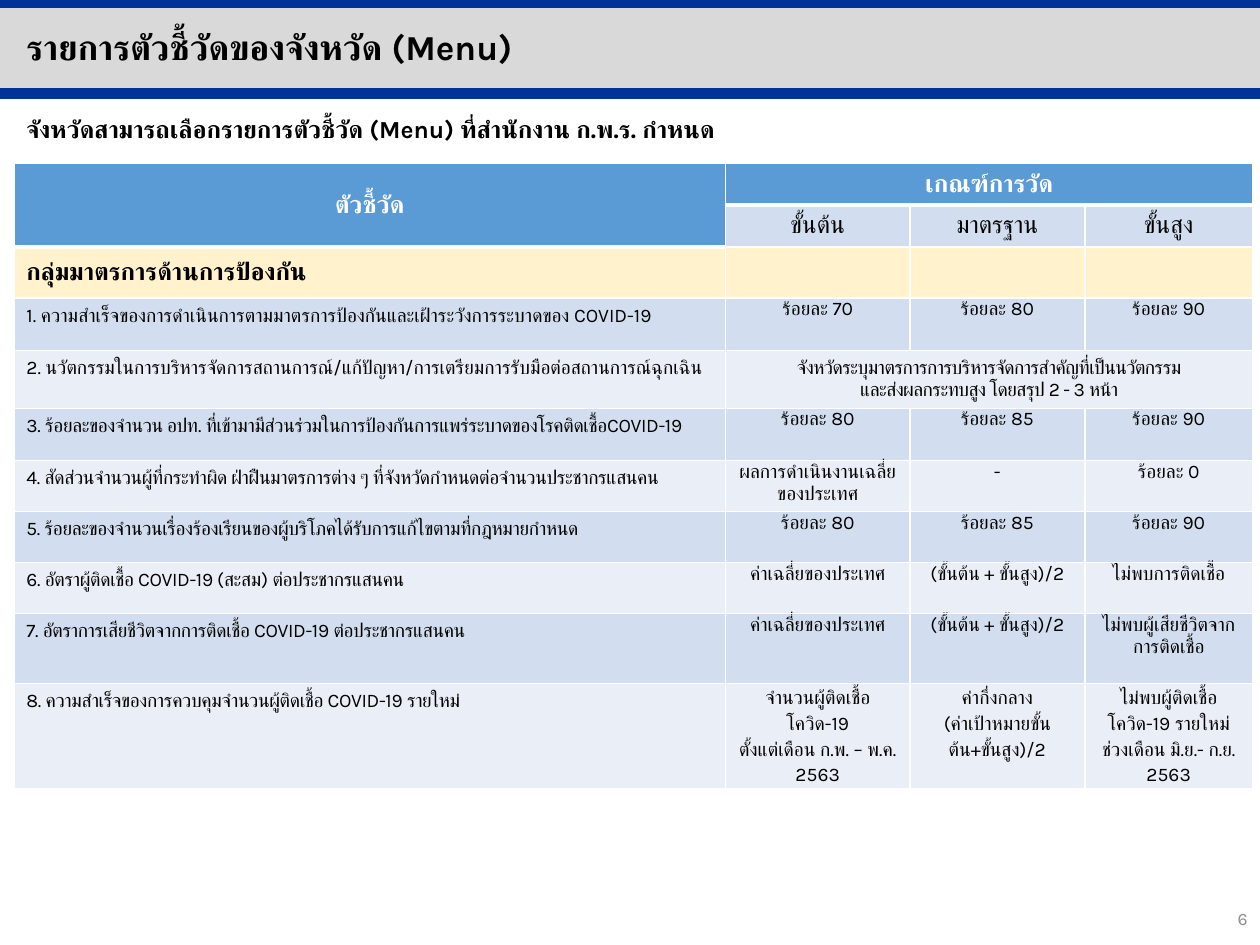
import dataclasses

import pptx
import pptx.dml.color
import pptx.enum.lang
import pptx.enum.shapes
import pptx.enum.text
import pptx.oxml.ns
import pptx.util
from lxml import etree

Cm = pptx.util.Cm
Pt = pptx.util.Pt
ALIGN = pptx.enum.text.PP_ALIGN
ANCHOR = pptx.enum.text.MSO_ANCHOR
qn = pptx.oxml.ns.qn


@dataclasses.dataclass(frozen=True)
class Theme:
    """Colours, font and type sizes of the deck."""
    font: str = "Karla"
    text: str = "000000"
    white: str = "FFFFFF"
    muted: str = "8C8C8C"
    bar: str = "D9D9D9"
    rule: str = "003399"
    header: str = "5B9BD5"
    group: str = "FFF2CC"
    bands: tuple = ("D2DEEF", "EAEFF7")
    title: int = 20
    heading: int = 14
    body: int = 11
    number: int = 10


T = Theme()

COLUMNS = [14.35, 3.71, 3.53, 3.38]
ROW_HEIGHTS = [0.83, 0.85, 1.03, 1.05, 1.17, 1.05, 1.03, 1.03, 1.03, 1.41, 2.12]
LEVELS = ["ขั้นต้น", "มาตรฐาน", "ขั้นสูง"]
INDICATORS = [
    ("1. ความสำเร็จของการดำเนินการตามมาตรการป้องกันและเฝ้าระวังการระบาดของ COVID-19", 0,
     ["ร้อยละ 70", "ร้อยละ 80", "ร้อยละ 90"]),
    ("2. นวัตกรรมในการบริหารจัดการสถานการณ์/แก้ปัญหา/การเตรียมการรับมือต่อสถานการณ์ฉุกเฉิน", 0,
     [["จังหวัดระบุมาตรการการบริหารจัดการสำคัญที่เป็นนวัตกรรม",
       "และส่งผลกระทบสูง โดยสรุป 2 - 3 หน้า"]]),
    ("3. ร้อยละของจำนวน อปท. ที่เข้ามามีส่วนร่วมในการป้องกันการแพร่ระบาดของโรคติดเชื้อCOVID-19", -0.2,
     ["ร้อยละ 80", "ร้อยละ 85", "ร้อยละ 90"]),
    ("4. สัดส่วนจำนวนผู้ที่กระทำผิด ฝ่าฝืนมาตรการต่าง ๆ ที่จังหวัดกำหนดต่อจำนวนประชากรแสนคน", -0.2,
     ["ผลการดำเนินงานเฉลี่ยของประเทศ", "-", "ร้อยละ 0"]),
    ("5. ร้อยละของจำนวนเรื่องร้องเรียนของผู้บริโภคได้รับการแก้ไขตามที่กฎหมายกำหนด", -0.2,
     ["ร้อยละ 80", "ร้อยละ 85", "ร้อยละ 90"]),
    ("6. อัตราผู้ติดเชื้อ COVID-19 (สะสม) ต่อประชากรแสนคน", -0.2,
     ["ค่าเฉลี่ยของประเทศ", "(ขั้นต้น + ขั้นสูง)/2", "ไม่พบการติดเชื้อ"]),
    ("7. อัตราการเสียชีวิตจากการติดเชื้อ COVID-19 ต่อประชากรแสนคน", -0.2,
     ["ค่าเฉลี่ยของประเทศ", "(ขั้นต้น + ขั้นสูง)/2", "ไม่พบผู้เสียชีวิตจากการติดเชื้อ"]),
    ("8. ความสำเร็จของการควบคุมจำนวนผู้ติดเชื้อ COVID-19 รายใหม่", -0.2,
     ["จำนวนผู้ติดเชื้อ\nโควิด-19\nตั้งแต่เดือน ก.พ. – พ.ค. 2563",
      ["ค่ากึ่งกลาง", "(ค่าเป้าหมายขั้นต้น+ขั้นสูง)/2"],
      "ไม่พบผู้ติดเชื้อ\nโควิด-19 รายใหม่\nช่วงเดือน มิ.ย.- ก.ย. 2563"]),
]


def rgb(value):
    """Return a colour from its hex value."""
    return pptx.dml.color.RGBColor.from_string(value)


def place(sp, box):
    """Move a shape to a box given in centimetres."""
    sp.left, sp.top, sp.width, sp.height = (Cm(v) for v in box)


def write(tf, text, size, color=T.text, bold=False, align=ALIGN.LEFT,
          spacing=0, leading=None, hanging=0):
    """Write a string, or a list of paragraphs, into a text frame."""
    for i, line in enumerate([text] if isinstance(text, str) else text):
        p = tf.add_paragraph() if i else tf.paragraphs[0]
        pPr = p._p.get_or_add_pPr()
        pPr.set("marL", str(Cm(hanging)))
        pPr.set("indent", str(-Cm(hanging)))
        etree.SubElement(pPr, qn("a:buNone"))
        p.alignment, p.space_before, p.line_spacing = align, Pt(0), leading
        for j, part in enumerate(line.split("\n")):
            if j:
                p.add_line_break()
            r = p.add_run()
            r.text = part
            r.font.name, r.font.size, r.font.bold = T.font, Pt(size), bold
            r.font.color.rgb = rgb(color)
            r.font.language_id = pptx.enum.lang.MSO_LANGUAGE_ID.THAI
            rPr = r._r.get_or_add_rPr()
            rPr.set("spc", str(round(spacing * 100)))
            etree.SubElement(rPr, qn("a:cs"), typeface=T.font)


def add_header(s, box):
    """Place the grey bar, its two rules and the title."""
    x, y, w, h = box
    title = s.shapes.title
    bar = s.shapes.add_shape(pptx.enum.shapes.MSO_SHAPE.RECTANGLE,
                             Cm(x), Cm(y + 0.13), Cm(w), Cm(h - 0.26))
    bar.shadow.inherit = False
    bar.fill.solid()
    bar.fill.fore_color.rgb = rgb(T.bar)
    bar.line.fill.background()
    title.element.addprevious(bar.element)
    for rule_y in (y + h - 0.11, y + 0.05):
        rule = s.shapes.add_connector(pptx.enum.shapes.MSO_CONNECTOR.STRAIGHT,
                                      Cm(x), Cm(rule_y), Cm(x + w), Cm(rule_y))
        rule.line.color.rgb = rgb(T.rule)
        rule.line.width = Pt(6)
        etree.SubElement(rule.element.spPr, qn("a:effectLst"))
        title.element.addprevious(rule.element)
    place(title, (x + 0.28, y + 0.38, w - 2.67, 1.12))
    title.text_frame.vertical_anchor = ANCHOR.MIDDLE
    write(title.text_frame, "รายการตัวชี้วัดของจังหวัด (Menu)", T.title, bold=True)


def add_lead(s, box):
    """Place the sentence above the table."""
    sp = s.placeholders[1]
    place(sp, box)
    write(sp.text_frame, "จังหวัดสามารถเลือกรายการตัวชี้วัด (Menu) ที่สำนักงาน ก.พ.ร. กำหนด",
          T.heading, bold=True)


def style_cell(cell, fill, bottom=1):
    """Give a cell white borders and a plain fill."""
    tcPr = cell._tc.get_or_add_tcPr()
    for tag, width in (("lnL", 1), ("lnR", 1), ("lnT", 1), ("lnB", bottom)):
        ln = etree.SubElement(tcPr, qn("a:" + tag), w=str(Pt(width)))
        solid = etree.SubElement(ln, qn("a:solidFill"))
        etree.SubElement(solid, qn("a:srgbClr"), val=T.white)
    cell.fill.solid()
    cell.fill.fore_color.rgb = rgb(fill)


def fill_heads(table):
    """Fill the two header rows and the group row."""
    for c in range(len(COLUMNS)):
        style_cell(table.cell(0, c), T.header, 3)
        style_cell(table.cell(1, c), T.bands[0] if c else T.header, 1 if c else 3)
        style_cell(table.cell(2, c), T.group)
    table.cell(0, 0).merge(table.cell(1, 0))
    table.cell(0, 1).merge(table.cell(0, 3))
    for c, text in enumerate(["ตัวชี้วัด", "เกณฑ์การวัด"]):
        cell = table.cell(0, c)
        cell.vertical_anchor = ANCHOR.MIDDLE
        write(cell.text_frame, text, T.heading, T.white, True, ALIGN.CENTER)
    for c, text in enumerate(LEVELS, 1):
        write(table.cell(1, c).text_frame, text, T.heading, align=ALIGN.CENTER)
    group = table.cell(2, 0)
    group.vertical_anchor = ANCHOR.MIDDLE
    write(group.text_frame, "กลุ่มมาตรการด้านการป้องกัน", T.heading, bold=True)


def fill_indicator(table, row, name, spacing, values):
    """Fill one indicator row, merging the levels for a single value."""
    for c in range(len(COLUMNS)):
        style_cell(table.cell(row, c), T.bands[(row - 3) % 2])
    write(table.cell(row, 0).text_frame, name, T.body, spacing=spacing, hanging=0.46)
    shared = len(values) == 1
    if shared:
        table.cell(row, 1).merge(table.cell(row, 3))
        table.cell(row, 1).vertical_anchor = ANCHOR.MIDDLE
    leading = 1.15 if row == len(ROW_HEIGHTS) - 1 else None
    for c, value in enumerate(values, 1):
        cell = table.cell(row, c)
        if not shared:
            cell.margin_left = cell.margin_right = Cm(0.18)
            cell.margin_top = cell.margin_bottom = 0
        write(cell.text_frame, value, T.body, align=ALIGN.CENTER,
              spacing=-0.3 if shared else 0, leading=leading)


def add_indicator_table(s, box):
    """Place the table of indicators and their levels."""
    table = s.shapes.add_table(len(ROW_HEIGHTS), len(COLUMNS), *(Cm(v) for v in box)).table
    for column, width in zip(table.columns, COLUMNS):
        column.width = Cm(width)
    for row, height in zip(table.rows, ROW_HEIGHTS):
        row.height = Cm(height)
    fill_heads(table)
    for row, indicator in enumerate(INDICATORS, 3):
        fill_indicator(table, row, *indicator)


def add_page_number(s, box):
    """Place the page number."""
    tf = s.shapes.add_textbox(*(Cm(v) for v in box)).text_frame
    tf.word_wrap = True
    tf.vertical_anchor = ANCHOR.MIDDLE
    write(tf, "6", T.number, T.muted, align=ALIGN.RIGHT)


def main():
    """Build the slide and save it."""
    prs = pptx.Presentation()
    prs.slide_width, prs.slide_height = Cm(25.4), Cm(19.05)
    s = prs.slides.add_slide(prs.slide_layouts[1])
    add_header(s, (0, 0, 25.4, 1.99))
    add_lead(s, (0.28, 2.18, 23.88, 0.86))
    add_indicator_table(s, (0.28, 3.3, sum(COLUMNS), sum(ROW_HEIGHTS)))
    add_page_number(s, (19.69, 18.01, 5.71, 1.02))
    prs.save("out.pptx")


if __name__ == "__main__":
    main()
